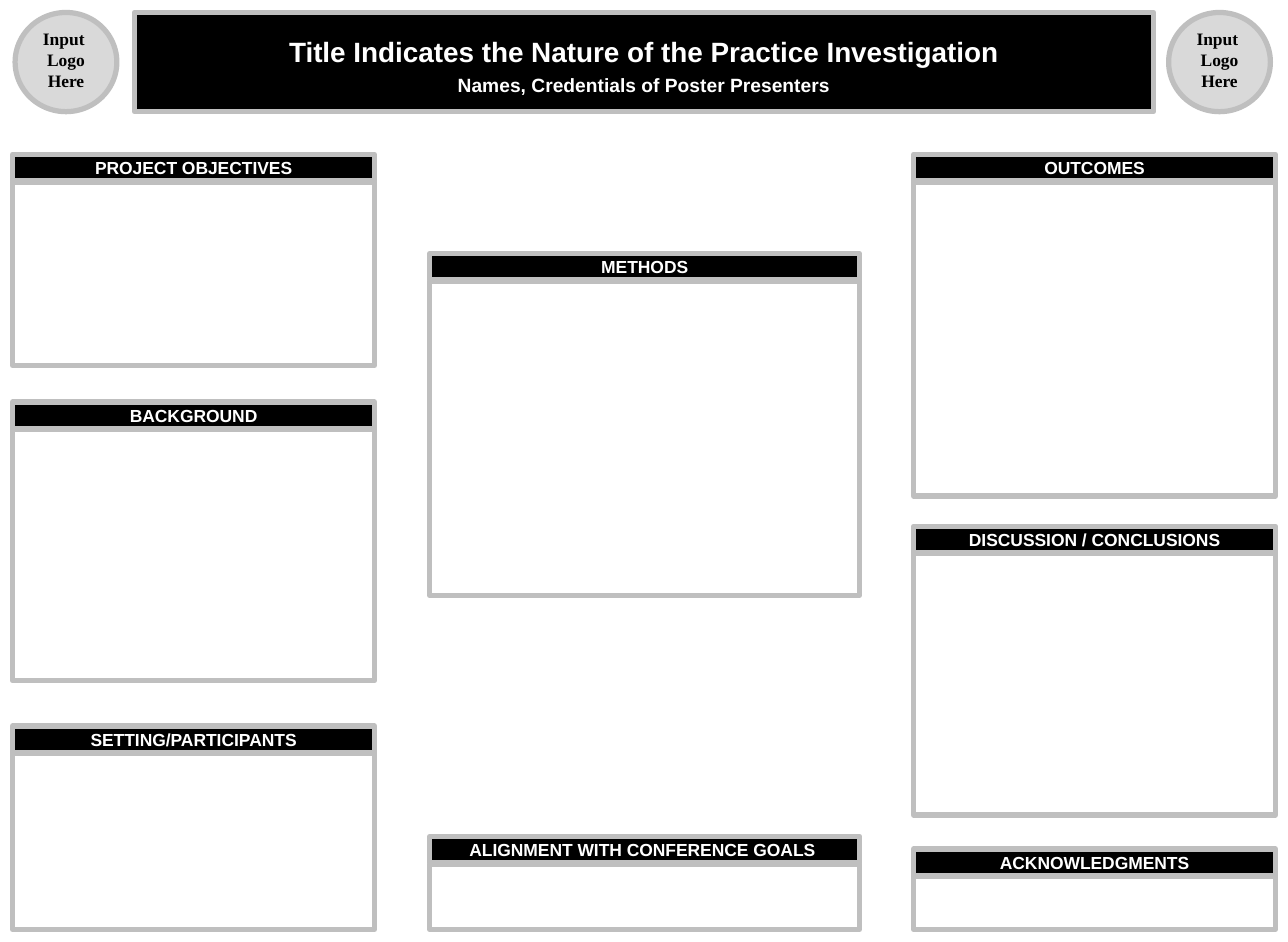
from dataclasses import dataclass

from pptx import Presentation
from pptx import util as u
from pptx.dml.color import RGBColor
from pptx.enum import shapes, text

WIDTH, HEIGHT = u.Inches(10.25), u.Inches(7.5)


@dataclass(frozen=True)
class Theme:
    black: str = "000000"
    white: str = "FFFFFF"
    border: str = "BFBFBF"
    badge: str = "D9D9D9"
    sans: str = "Arial"
    serif: str = "Times New Roman"
    title: int = 16
    subtitle: int = 11
    label: int = 10
    line: int = 3


THEME = Theme()

# Columns as (left, width), in percent of the slide's width
LEFT, CENTRE, RIGHT = (0.98, 28.1), (33.37, 33.37), (70.93, 28.1)

# Header row and heading bar, in percent of the slide's height
HEADER_TOP, HEADER_HEIGHT = 1.33, 10.53
BAR_HEIGHT, BAR_STEP = 2.8, 2.93

# Panels: column, top and height in percent of the slide's height, heading
PANELS = [
    (LEFT, 16.4, 22.4, "PROJECT OBJECTIVES"),
    (LEFT, 42.67, 29.6, "BACKGROUND"),
    (LEFT, 77.07, 21.6, "SETTING/PARTICIPANTS"),
    (CENTRE, 26.93, 36.27, "METHODS"),
    (CENTRE, 88.8, 9.87, "ALIGNMENT WITH CONFERENCE GOALS "),
    (RIGHT, 16.4, 36.27, "OUTCOMES"),
    (RIGHT, 55.87, 30.67, "DISCUSSION / CONCLUSIONS"),
    (RIGHT, 90.13, 8.53, "ACKNOWLEDGMENTS"),
]


def add_box(s, column, top, height, fill=None,
            kind=shapes.MSO_SHAPE.RECTANGLE):
    """Add a bordered shape placed by percent of the slide."""
    left, width = column
    sp = s.shapes.add_shape(
        kind, int(WIDTH * left / 100), int(HEIGHT * top / 100),
        int(WIDTH * width / 100), int(HEIGHT * height / 100))
    sp.shadow.inherit = False
    if fill:
        sp.fill.solid()
        sp.fill.fore_color.rgb = RGBColor.from_string(fill)
    else:
        sp.fill.background()
    sp.line.color.rgb = RGBColor.from_string(THEME.border)
    sp.line.width = u.Pt(THEME.line)
    return sp


def prepare_frame(sp, anchor=text.MSO_ANCHOR.MIDDLE, side=0.02):
    tf = sp.text_frame
    tf.word_wrap = True
    tf.vertical_anchor = anchor
    tf.margin_left = tf.margin_right = u.Inches(side)
    tf.margin_top = tf.margin_bottom = u.Inches(0.01)
    return tf


def add_text(tf, content, size=THEME.label, font=THEME.sans,
             color=THEME.white, spacing=None):
    """Write a bold centred paragraph, using the empty first one if free."""
    p = tf.paragraphs[0] if not tf.text else tf.add_paragraph()
    p.alignment = text.PP_ALIGN.CENTER
    p.line_spacing = spacing
    r = p.add_run()
    r.text = content
    r.font.size, r.font.name, r.font.bold = u.Pt(size), font, True
    r.font.color.rgb = RGBColor.from_string(color)


def add_banner(s):
    sp = add_box(s, (10.44, 79.12), HEADER_TOP, HEADER_HEIGHT, THEME.black)
    tf = prepare_frame(sp, side=0.01)
    add_text(tf, "Title Indicates the Nature of the Practice Investigation",
             size=THEME.title, spacing=1.2)
    add_text(tf, "Names, Credentials of Poster Presenters",
             size=THEME.subtitle, spacing=1.2)


def add_badge(s, left):
    sp = add_box(s, (left, 7.9), HEADER_TOP, HEADER_HEIGHT, THEME.badge,
                 shapes.MSO_SHAPE.OVAL)
    tf = prepare_frame(sp, anchor=text.MSO_ANCHOR.TOP)
    for line in ("Input ", "Logo Here"):
        add_text(tf, line, font=THEME.serif, color=THEME.black)


def add_panel(s, column, top, height, heading):
    add_box(s, column, top + BAR_STEP, height - BAR_STEP)
    bar = add_box(s, column, top, BAR_HEIGHT, THEME.black)
    add_text(prepare_frame(bar), heading)


def main():
    prs = Presentation()
    prs.slide_width, prs.slide_height = WIDTH, HEIGHT
    s = prs.slides.add_slide(prs.slide_layouts[6])

    # Header
    add_banner(s)
    for left in (1.17, 90.73):
        add_badge(s, left)

    # Poster sections
    for panel in PANELS:
        add_panel(s, *panel)

    prs.save("out.pptx")


if __name__ == "__main__":
    main()
